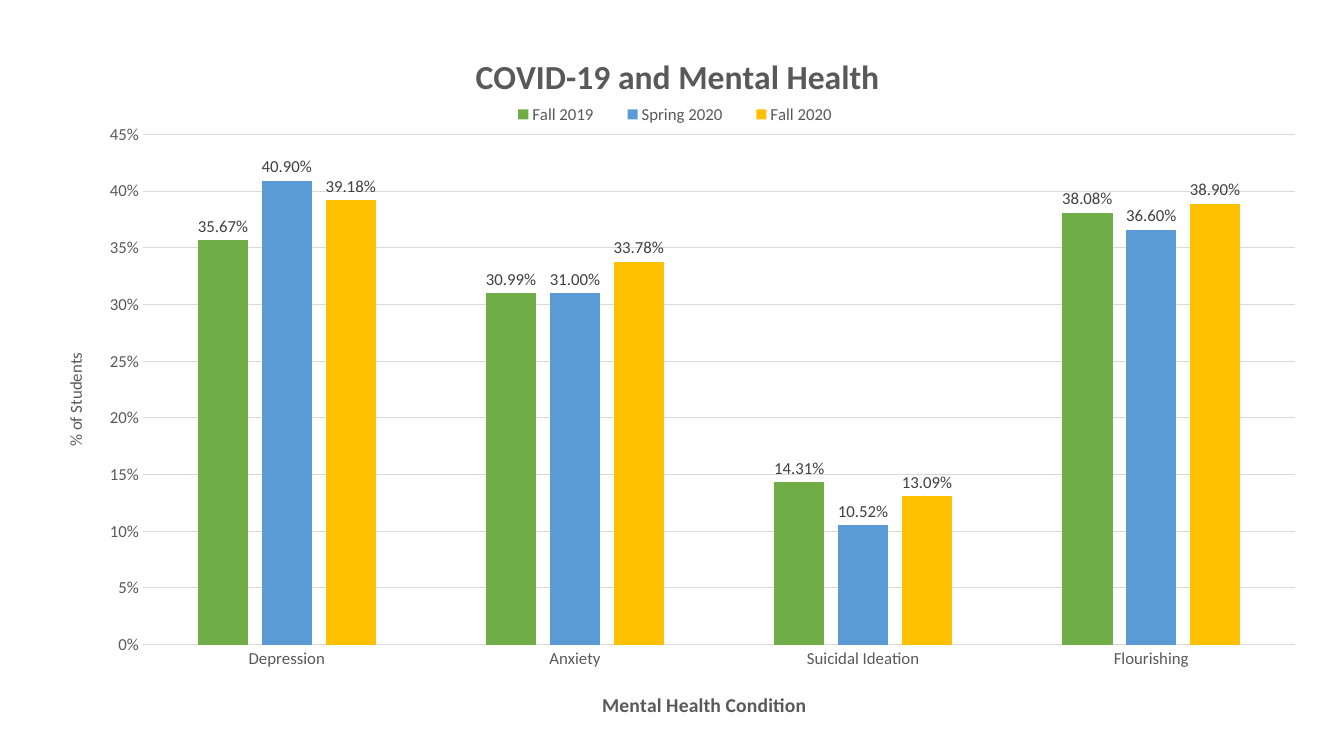
from dataclasses import dataclass

import pptx
import pptx.chart.data
import pptx.dml.color
import pptx.enum.chart
import pptx.oxml.ns
import pptx.util
from lxml import etree

Inches = pptx.util.Inches
Pt = pptx.util.Pt
RGBColor = pptx.dml.color.RGBColor
qn = pptx.oxml.ns.qn

GREEN = RGBColor(0x70, 0xAD, 0x47)
BLUE = RGBColor(0x5B, 0x9B, 0xD5)
GOLD = RGBColor(0xFF, 0xC0, 0x00)
TEXT_GRAY = RGBColor(0x59, 0x59, 0x59)
LABEL_GRAY = RGBColor(0x40, 0x40, 0x40)
GRID_GRAY = RGBColor(0xD9, 0xD9, 0xD9)
FONT = "Calibri"


@dataclass
class Term:
    name: str
    shares: list[float]
    color: RGBColor


CONDITIONS = ["Depression", "Anxiety", "Suicidal Ideation", "Flourishing"]
TERMS = [
    Term("Fall 2019", [0.3567, 0.3099, 0.1431, 0.3808], GREEN),
    Term("Spring 2020", [0.409, 0.31, 0.1052, 0.366], BLUE),
    Term("Fall 2020", [0.3918, 0.3378, 0.1309, 0.389], GOLD),
]


def style_font(font, size: float, color: RGBColor = TEXT_GRAY, bold: bool = False) -> None:
    font.name = FONT
    font.size = Pt(size)
    font.bold = bold
    font.color.rgb = color


def make_layout(x: float, y: float, w: float | None = None, h: float | None = None,
                inner: bool = False):
    """Return a manual c:layout, in fractions of the chart space."""
    layout = etree.Element(qn("c:layout"))
    manual = etree.SubElement(layout, qn("c:manualLayout"))
    settings = {"layoutTarget": "inner" if inner else None, "xMode": "edge",
                "yMode": "edge", "x": x, "y": y, "w": w, "h": h}
    for tag, value in settings.items():
        if value is not None:
            etree.SubElement(manual, qn(f"c:{tag}")).set("val", str(value))
    return layout


def place(element, layout) -> None:
    """Give a title or legend element its layout, just before c:overlay."""
    for old in element.findall(qn("c:layout")):
        element.remove(old)
    element.find(qn("c:overlay")).addprevious(layout)


def write_title(title, text: str, size: float, bold: bool, x: float, y: float) -> None:
    title.text_frame.text = text
    style_font(title.text_frame.paragraphs[0].font, size, bold=bold)
    place(title._element, make_layout(x, y))


def style_axis(axis) -> None:
    style_font(axis.tick_labels.font, 12)
    axis.major_tick_mark = pptx.enum.chart.XL_TICK_MARK.NONE
    axis.minor_tick_mark = pptx.enum.chart.XL_TICK_MARK.NONE


def style_line(line) -> None:
    line.color.rgb = GRID_GRAY
    line.width = Pt(0.75)


def style_term(series, term: Term) -> None:
    series.format.fill.solid()
    series.format.fill.fore_color.rgb = term.color
    series.invert_if_negative = False
    labels = series.data_labels
    labels.show_value = True
    labels.position = pptx.enum.chart.XL_LABEL_POSITION.OUTSIDE_END
    labels.number_format = "0.00%"
    labels.number_format_is_linked = False
    style_font(labels.font, 12, LABEL_GRAY)


def add_health_chart(slide) -> None:
    data = pptx.chart.data.CategoryChartData(number_format="0.00%")
    data.categories = CONDITIONS
    for term in TERMS:
        data.add_series(term.name, term.shares)
    chart = slide.shapes.add_chart(
        pptx.enum.chart.XL_CHART_TYPE.COLUMN_CLUSTERED,
        Inches(0.34), Inches(0.24), Inches(12.66), Inches(7.02), data).chart
    style_font(chart.font, 10)

    bars = chart.plots[0]
    bars.gap_width = 219
    bars.overlap = -27
    bars.vary_by_categories = False
    for series, term in zip(bars.series, TERMS):
        style_term(series, term)

    conditions = chart.category_axis
    style_axis(conditions)
    style_line(conditions.format.line)

    students = chart.value_axis
    style_axis(students)
    students.minimum_scale = 0
    students.maximum_scale = 0.45
    students.major_unit = 0.05
    students.tick_labels.number_format = "0%"
    students.tick_labels.number_format_is_linked = False
    students.format.line.fill.background()
    style_line(students.major_gridlines.format.line)

    write_title(chart.chart_title, "COVID-19 and Mental Health", 24, True, 0.341, 0.034)
    write_title(conditions.axis_title, "Mental Health Condition", 14, True, 0.442, 0.938)
    write_title(students.axis_title, "% of Students", 12, False, 0.021, 0.46)

    chart.has_legend = True
    chart.legend.position = pptx.enum.chart.XL_LEGEND_POSITION.BOTTOM
    chart.legend.include_in_layout = False
    style_font(chart.legend.font, 12)
    place(chart.legend._element, make_layout(0.357, 0.105, 0.29, 0.045))

    plot_area = chart._chartSpace.find(".//" + qn("c:plotArea"))
    for old in plot_area.findall(qn("c:layout")):
        plot_area.remove(old)
    plot_area.insert(0, make_layout(0.085, 0.156, 0.903, 0.721, inner=True))


def main() -> None:
    deck = pptx.Presentation()
    deck.slide_width = Inches(13.33)
    deck.slide_height = Inches(7.5)
    add_health_chart(deck.slides.add_slide(deck.slide_layouts[6]))
    deck.save("out.pptx")


if __name__ == "__main__":
    main()
